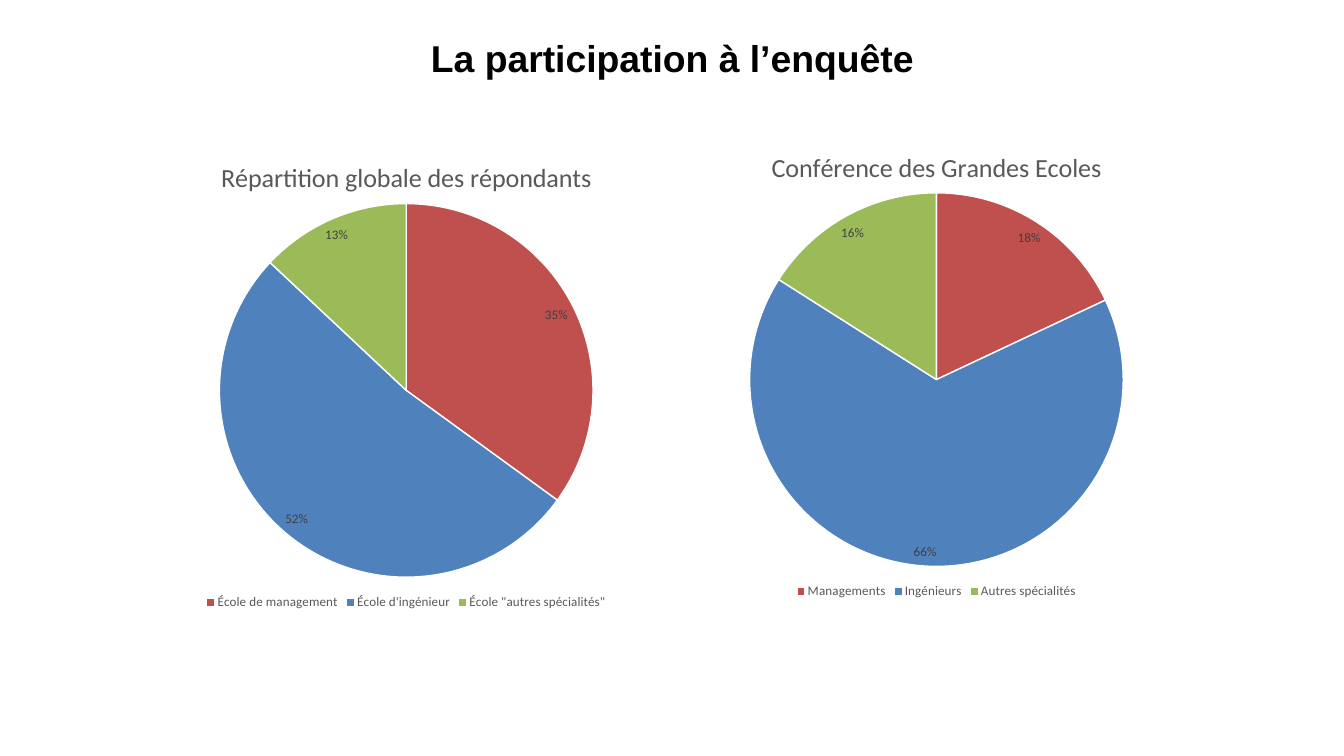
import pptx
import pptx.chart.data
import pptx.dml.color
import pptx.enum.chart
import pptx.enum.text
import pptx.oxml
import pptx.oxml.ns
import pptx.util
from pptx.util import Inches

SLICE_COLORS = ["C0504D", "4F81BD", "9BBB59"]
GREY = "595959"
PIE_TOP, PIE_SIZE = 0.91, 5.56


def rgb(color):
    return pptx.dml.color.RGBColor.from_string(color)


def set_font(font, size, color, name="Calibri", bold=False):
    font.size = pptx.util.Pt(size)
    font.name = name
    font.bold = bold
    font.color.rgb = rgb(color)


def add_text(tf, text, **fmt):
    p = tf.paragraphs[0]
    p.alignment = pptx.enum.text.PP_ALIGN.CENTER
    r = p.add_run()
    r.text = text
    set_font(r.font, **fmt)


def place_pie(chart, width, height):
    """Fix the pie as a square centred across the chart."""
    parts = {"x": (width - PIE_SIZE) / 2 / width, "y": PIE_TOP / height,
             "w": PIE_SIZE / width, "h": PIE_SIZE / height}
    values = "".join(f'<c:{k} val="{v:.4f}"/>' for k, v in parts.items())
    layout = pptx.oxml.parse_xml(
        f'<c:layout {pptx.oxml.ns.nsdecls("c")}><c:manualLayout>'
        '<c:layoutTarget val="inner"/><c:xMode val="edge"/><c:yMode val="edge"/>'
        f'{values}</c:manualLayout></c:layout>')
    plot_area = chart._chartSpace.chart.plotArea
    for old in plot_area.findall(pptx.oxml.ns.qn("c:layout")):
        plot_area.remove(old)
    plot_area.insert(0, layout)


def add_pie(s, left, top, width, height, title, shares):
    data = pptx.chart.data.CategoryChartData(number_format="General")
    data.categories = list(shares)
    data.add_series("Series 1", list(shares.values()))
    chart = s.shapes.add_chart(
        pptx.enum.chart.XL_CHART_TYPE.PIE, Inches(left), Inches(top),
        Inches(width), Inches(height), data).chart
    set_font(chart.font, 10, "000000")

    chart.has_title = True
    add_text(chart.chart_title.text_frame, title, size=28, color=GREY)
    chart.chart_title.include_in_layout = False

    chart.has_legend = True
    chart.legend.position = pptx.enum.chart.XL_LEGEND_POSITION.BOTTOM
    chart.legend.include_in_layout = False
    set_font(chart.legend.font, 14, GREY)

    plot = chart.plots[0]
    plot.vary_by_categories = True
    for i, color in enumerate(SLICE_COLORS):
        fmt = plot.series[0].points[i].format
        fmt.fill.solid()
        fmt.fill.fore_color.rgb = rgb(color)
        fmt.line.color.rgb = rgb("FFFFFF")
        fmt.line.width = pptx.util.Pt(1.5)

    labels = plot.series[0].data_labels
    labels.show_percentage = True
    labels.show_value = False
    labels.number_format = "0%"
    labels.number_format_is_linked = False
    labels.position = pptx.enum.chart.XL_LABEL_POSITION.BEST_FIT
    set_font(labels.font, 14, "404040")
    place_pie(chart, width, height)


def add_heading(s, left, top, width, height, text):
    sp = s.shapes.add_textbox(Inches(left), Inches(top), Inches(width), Inches(height))
    tf = sp.text_frame
    tf.word_wrap = True
    tf.auto_size = pptx.enum.text.MSO_AUTO_SIZE.SHAPE_TO_FIT_TEXT
    add_text(tf, text, size=40, color="000000", name="Arial", bold=True)


def main():
    prs = pptx.Presentation()
    prs.slide_width, prs.slide_height = Inches(20), Inches(11.25)
    s = prs.slides.add_slide(prs.slide_layouts[6])
    add_pie(s, 9.29, 1.96, 9.29, 7, "Conférence des Grandes Ecoles",
            {"Managements": 18, "Ingénieurs": 66, "Autres spécialités": 16})
    add_pie(s, 0.58, 2.12, 10.93, 7, "Répartition globale des répondants",
            {"École de management": 35, "École d'ingénieur": 52,
             'École "autres spécialités"': 13})
    add_heading(s, 3.95, 0.48, 12.11, 0.77, "La participation à l’enquête")
    prs.save("out.pptx")


if __name__ == "__main__":
    main()
